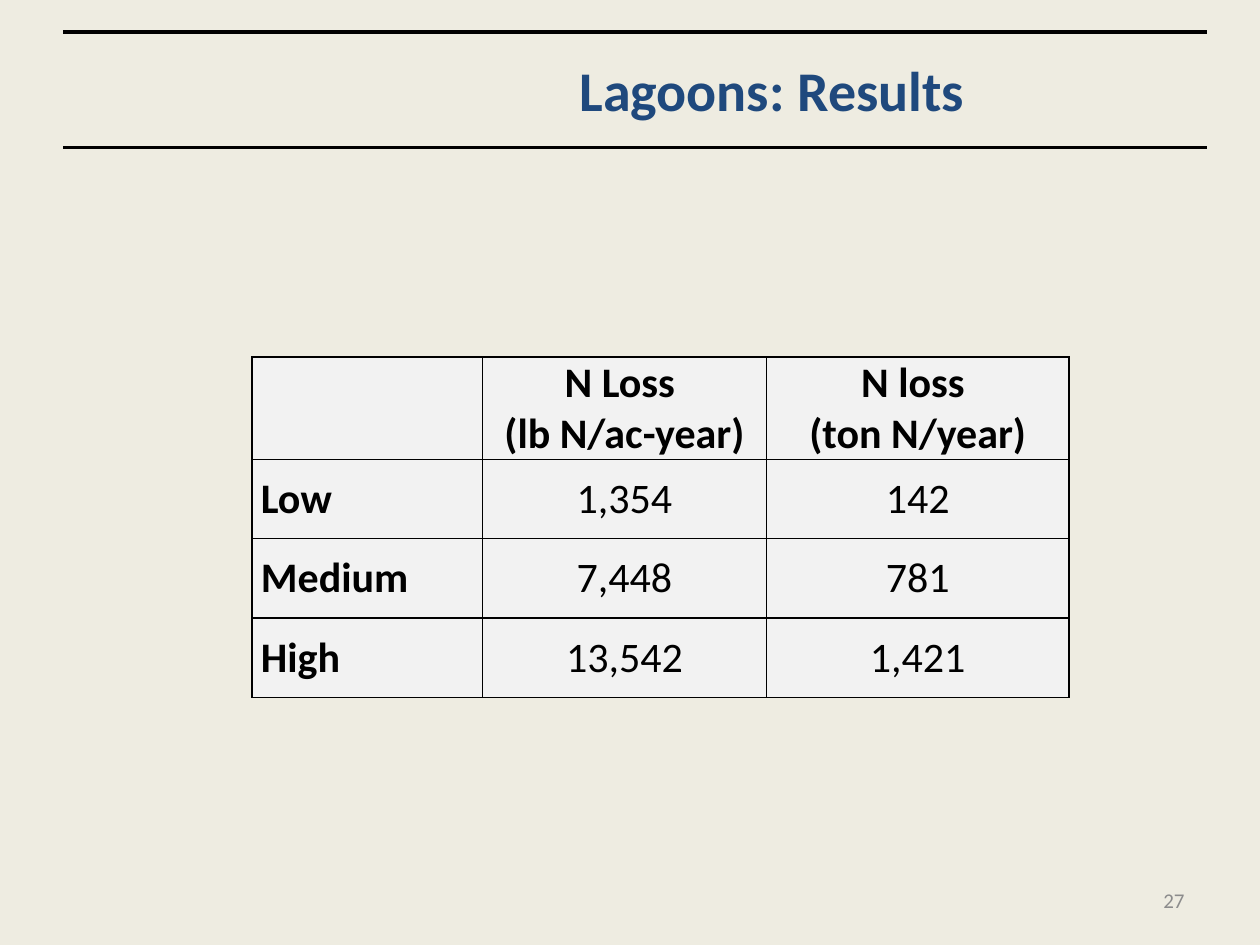
from dataclasses import dataclass

from lxml.etree import SubElement
from pptx import Presentation
from pptx.dml.color import RGBColor
from pptx.enum.shapes import MSO_CONNECTOR
from pptx.enum.text import MSO_ANCHOR, PP_ALIGN
from pptx.oxml.ns import qn
from pptx.slide import Slide
from pptx.table import _Cell
from pptx.text.text import TextFrame
from pptx.util import Cm, Pt

COLORS = {
    "background": "EEECE1",
    "black": "000000",
    "title": "1F497D",
    "page_number": "8C8C8C",
    "cell": "F2F2F2",
}
RULE_LEFT, RULE_RIGHT = 1.27, 24.33
RULE_TOPS = (2.97, 0.64)
COLUMN_WIDTHS = (4.65, 5.72, 6.1)
ROW_HEIGHTS = (2.06, 1.6, 1.6, 1.6)
ROWS = (
    ("", "N Loss \n(lb N/ac-year)", "N loss \n(ton N/year)"),
    ("Low", "1,354", "142"),
    ("Medium", "7,448", "781"),
    ("High", "13,542", "1,421"),
)


@dataclass
class TextStyle:
    size: int
    color: str
    bold: bool
    align: PP_ALIGN


@dataclass
class Label:
    """A text box with its place in centimetres."""

    text: str
    left: float
    top: float
    width: float
    height: float
    style: TextStyle


LABELS = (
    Label("Lagoons: Results", 6.78, 0.64, 17.57, 2.33,
          TextStyle(32, "title", True, PP_ALIGN.CENTER)),
    Label("27", 18.2, 17.65, 5.93, 1.01,
          TextStyle(12, "page_number", False, PP_ALIGN.RIGHT)),
)


def color(name: str) -> RGBColor:
    return RGBColor.from_string(COLORS[name])


def write_text(text_frame: TextFrame, text: str, style: TextStyle) -> None:
    text_frame.text = text
    for paragraph in text_frame.paragraphs:
        paragraph.alignment = style.align
        font = paragraph.font
        font.name = "Calibri"
        font.size = Pt(style.size)
        font.bold = style.bold
        font.color.rgb = color(style.color)


def add_rule(slide: Slide, top: float) -> None:
    rule = slide.shapes.add_connector(
        MSO_CONNECTOR.STRAIGHT, Cm(RULE_LEFT), Cm(top), Cm(RULE_RIGHT), Cm(top))
    rule.line.color.rgb = color("black")
    rule.line.width = Pt(2)
    SubElement(rule._element.spPr, qn("a:effectLst"))


def add_label(slide: Slide, label: Label) -> None:
    box = slide.shapes.add_textbox(
        Cm(label.left), Cm(label.top), Cm(label.width), Cm(label.height))
    box.text_frame.word_wrap = True
    box.text_frame.vertical_anchor = MSO_ANCHOR.MIDDLE
    write_text(box.text_frame, label.text, label.style)


def add_borders(cell: _Cell) -> None:
    """Draw the four borders; they must precede the fill in the cell's XML."""
    properties = cell._tc.get_or_add_tcPr()
    for side in ("a:lnL", "a:lnR", "a:lnT", "a:lnB"):
        border = SubElement(properties, qn(side), w=str(Pt(1)))
        fill = SubElement(border, qn("a:solidFill"))
        SubElement(fill, qn("a:srgbClr"), val=COLORS["black"])


def format_cell(cell: _Cell, text: str, style: TextStyle) -> None:
    cell.margin_left = cell.margin_right = Cm(0.18)
    cell.margin_top = cell.margin_bottom = 0
    cell.vertical_anchor = MSO_ANCHOR.MIDDLE
    add_borders(cell)
    cell.fill.solid()
    cell.fill.fore_color.rgb = color("cell")
    write_text(cell.text_frame, text, style)


def add_results_table(slide: Slide) -> None:
    table = slide.shapes.add_table(
        len(ROWS), len(COLUMN_WIDTHS), Cm(5.08), Cm(7.2),
        Cm(sum(COLUMN_WIDTHS)), Cm(sum(ROW_HEIGHTS))).table
    for column, width in zip(table.columns, COLUMN_WIDTHS):
        column.width = Cm(width)
    for row, height in zip(table.rows, ROW_HEIGHTS):
        row.height = Cm(height)
    for row_index, texts in enumerate(ROWS):
        for column_index, text in enumerate(texts):
            is_header = row_index == 0 or column_index == 0
            align = PP_ALIGN.CENTER if column_index else PP_ALIGN.LEFT
            format_cell(table.cell(row_index, column_index), text,
                        TextStyle(24, "black", is_header, align))


def main() -> None:
    presentation = Presentation()
    presentation.slide_width = Cm(25.4)
    presentation.slide_height = Cm(19.05)
    slide = presentation.slides.add_slide(presentation.slide_layouts[6])
    slide.background.fill.solid()
    slide.background.fill.fore_color.rgb = color("background")
    for top in RULE_TOPS:
        add_rule(slide, top)
    for label in LABELS:
        add_label(slide, label)
    add_results_table(slide)
    presentation.save("out.pptx")


if __name__ == "__main__":
    main()
